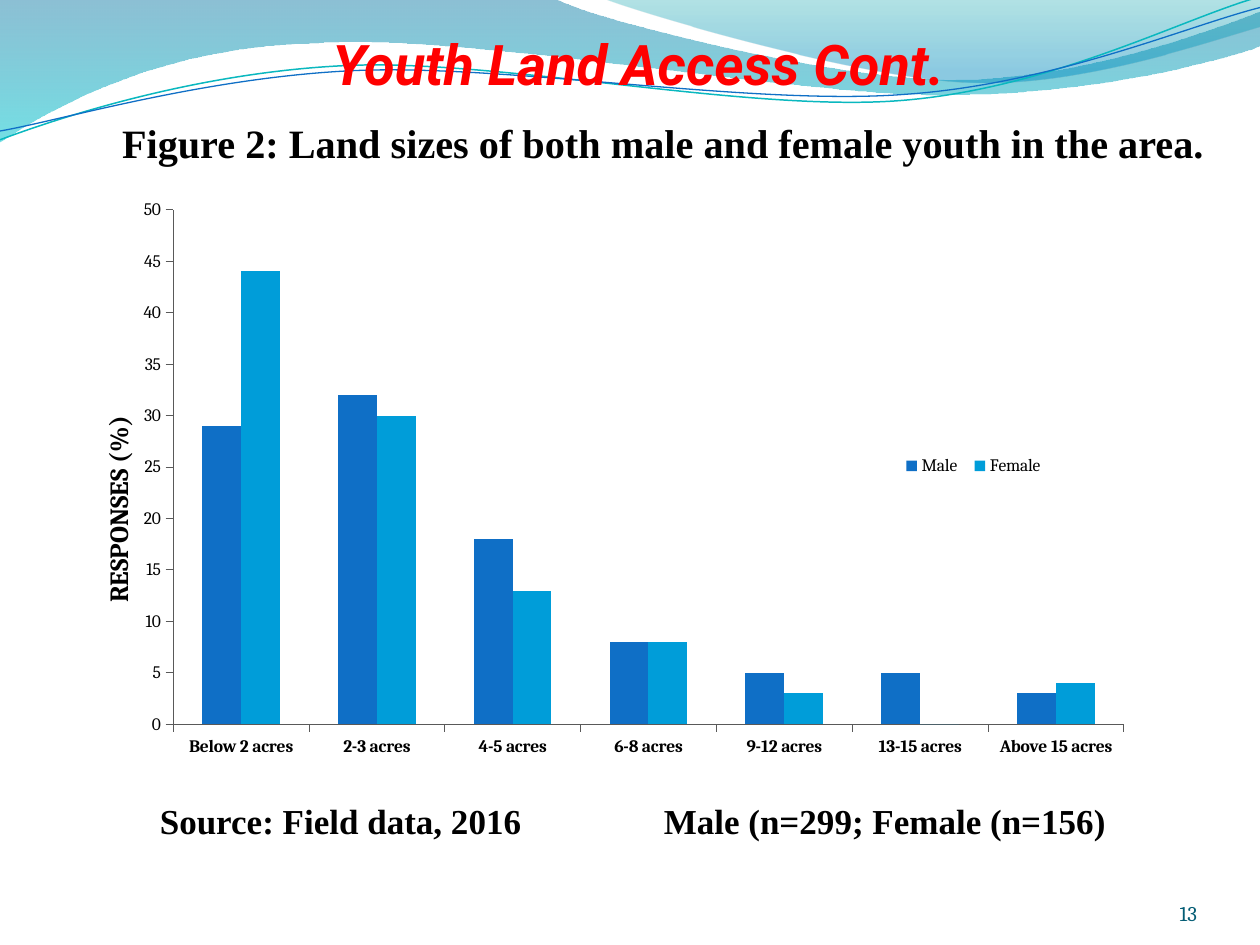
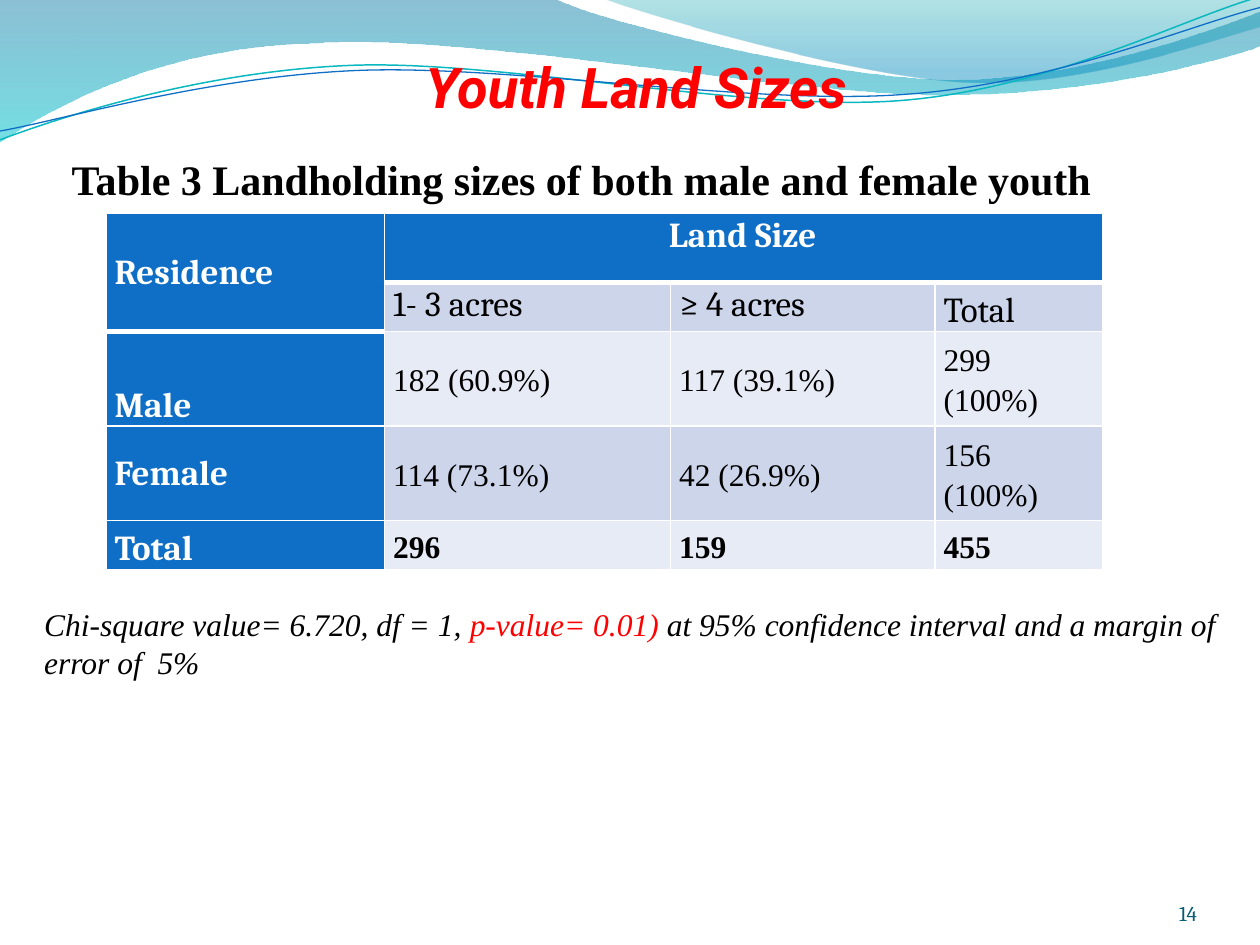
import lxml.etree
import pptx
import pptx.chart.data
import pptx.dml.color
import pptx.enum.chart
import pptx.enum.text
import pptx.oxml
import pptx.oxml.ns
import pptx.util

Inches = pptx.util.Inches
Pt = pptx.util.Pt
Align = pptx.enum.text.PP_ALIGN
Anchor = pptx.enum.text.MSO_ANCHOR
qn = pptx.oxml.ns.qn

COLORS = {
    "title": "FF0000", "text": "000000", "number": "045D75", "white": "FFFFFF",
    "blue": "0F6FC6", "sky": "009DD9", "teal": "0AB8BF", "axis": "595959",
    "row_dark": "CCD5EA", "row_light": "E7EBF5",
    "wave_top": "0074A1", "wave_bottom": "00C6CF",
    "crest_top": "00A1A9", "crest_bottom": "008BBF",
}
SERIF, HEADING, BODY = "Times New Roman", "Roboto", "Cambria"

# An outline is a list of steps: one point for a line, three for a Bezier curve.
WAVE = [[(0, 0)], [(4.4, -0.01)],
        [(4.76, 0.17), (6.64, 0.63), (7.58, 0.63)],
        [(8.53, 0.63), (9.58, 0.26), (10, 0.09)], [(10.01, 0.36)],
        [(9.83, 0.44), (8.7, 0.76), (7.46, 0.75)],
        [(6.22, 0.75), (3.82, 0.28), (2.57, 0.34)],
        [(1.29, 0.36), (0.46, 0.83), (-0.01, 1.13)]]
CREST = [[(4.79, -0.01)],
         [(5.09, 0.11), (6.82, 0.62), (7.69, 0.65)],
         [(8.56, 0.69), (9.61, 0.32), (10, 0.21)], [(10, 0)]]
TEAL_LINE = [[(0, 1.11)],
             [(0.48, 0.93), (1.58, 0.57), (2.77, 0.52)],
             [(3.95, 0.47), (5.93, 0.89), (7.13, 0.8)],
             [(8.33, 0.71), (9.38, 0.15), (9.98, -0.02)]]
BLUE_LINE = [[(0, 1.04)],
             [(0.47, 0.96), (1.64, 0.61), (2.83, 0.56)],
             [(4.03, 0.51), (5.97, 0.84), (7.17, 0.75)],
             [(8.36, 0.67), (9.41, 0.21), (10, 0.06)]]


def rgb(name):
    return pptx.dml.color.RGBColor.from_string(COLORS[name])


def bend_segments(shape, outline):
    """Turn each run of three straight steps that stands for a curve into a Bezier."""
    steps = iter(list(shape._element.iter(qn("a:lnTo"))))
    for segment in outline[1:]:
        first, *others = [next(steps) for _ in segment]
        if others:
            curve = lxml.etree.Element(qn("a:cubicBezTo"))
            first.addprevious(curve)
            for step in (first, *others):
                curve.append(step[0])
                step.getparent().remove(step)


def set_font(font, name, size, color="text", bold=False, italic=False):
    font.name, font.size, font.bold, font.italic = name, Pt(size), bold, italic
    font.color.rgb = rgb(color)


def set_layout(element, index, **fractions):
    """Place a chart part by fractions of the chart's frame."""
    for old in element.findall(qn("c:layout")):
        element.remove(old)
    layout = lxml.etree.Element(qn("c:layout"))
    manual = lxml.etree.SubElement(layout, qn("c:manualLayout"))
    settings = {"xMode": "edge", "yMode": "edge", **fractions}
    if element.tag == qn("c:plotArea"):
        settings = {"layoutTarget": "inner", **settings}
    for key, value in settings.items():
        lxml.etree.SubElement(manual, qn(f"c:{key}")).set("val", str(value))
    element.insert(index, layout)


def set_borders(cell, top, bottom):
    properties = cell._tc.get_or_add_tcPr()
    for side, width in (("L", 1), ("R", 1), ("T", top), ("B", bottom)):
        line = lxml.etree.SubElement(properties, qn(f"a:ln{side}"), w=str(Pt(width)))
        fill = lxml.etree.SubElement(line, qn("a:solidFill"))
        lxml.etree.SubElement(fill, qn("a:srgbClr"), val=COLORS["white"])


class Deck:
    def __init__(self):
        self.presentation = pptx.Presentation()
        self.presentation.slide_width = Inches(10)
        self.presentation.slide_height = Inches(7.5)
        self.slide = None

    def start_slide(self, title, title_box, number):
        self.slide = self.presentation.slides.add_slide(self.presentation.slide_layouts[6])
        self.band(WAVE, ("wave_top", 0, 45), ("wave_bottom", 1, 55))
        self.band(CREST, ("crest_top", 0, 30), ("crest_bottom", 0.8, 45))
        self.curve(TEAL_LINE, "teal", 0.85)
        self.curve(BLUE_LINE, "blue", 0.75)
        self.text(title_box, [(title, "title")], HEADING, 32, bold=True, italic=True,
                  align=Align.CENTER, anchor=Anchor.BOTTOM, insets=(0, 0, 0.02, 0))
        self.text((8.67, 6.95, 0.83, 0.4), [(number, "number")], BODY, 12,
                  align=Align.RIGHT, anchor=Anchor.BOTTOM, insets=(0, 0, 0, 0))

    def outline(self, outline, close):
        start, *points = [(Inches(x), Inches(y)) for segment in outline for x, y in segment]
        builder = self.slide.shapes.build_freeform(*start)
        builder.add_line_segments(points, close=close)
        shape = builder.convert_to_shape()
        bend_segments(shape, outline)
        shape.shadow.inherit = False
        return shape

    def band(self, outline, *stops):
        """Fill an outline with a downward gradient of (colour, position, opacity) stops."""
        shape = self.outline(outline, close=True)
        shape.line.fill.background()
        shape.fill.gradient()
        shape.fill.gradient_angle = 270
        for stop, (color, position, opacity) in zip(shape.fill.gradient_stops, stops):
            stop.color.rgb = rgb(color)
            stop.position = position
            color_element = stop._gs.find(qn("a:srgbClr"))
            lxml.etree.SubElement(color_element, qn("a:alpha"), val=str(opacity * 1000))

    def curve(self, outline, color, width):
        shape = self.outline(outline, close=False)
        shape.fill.background()
        shape.line.color.rgb = rgb(color)
        shape.line.width = Pt(width)

    def text(self, box, parts, font, size, bold=False, italic=False, align=Align.LEFT,
             anchor=Anchor.TOP, insets=(0.1, 0.05, 0.1, 0.05), spacing=1, before=0):
        """Add one paragraph made of (text, colour) parts."""
        frame = self.slide.shapes.add_textbox(*map(Inches, box)).text_frame
        frame.word_wrap = True
        frame.vertical_anchor = anchor
        (frame.margin_left, frame.margin_top,
         frame.margin_right, frame.margin_bottom) = map(Inches, insets)
        paragraph = frame.paragraphs[0]
        paragraph.alignment = align
        paragraph.line_spacing = spacing
        paragraph.space_before = Pt(before)
        for words, color in parts:
            run = paragraph.add_run()
            run.text = words
            set_font(run.font, font, size, color, bold, italic)
        return paragraph

    def column_chart(self, box, categories, series, value_title):
        data = pptx.chart.data.CategoryChartData()
        data.categories = categories
        for name, values, _ in series:
            data.add_series(name, values)
        chart = self.slide.shapes.add_chart(
            pptx.enum.chart.XL_CHART_TYPE.COLUMN_CLUSTERED, *map(Inches, box), data).chart
        set_font(chart.font, BODY, 10)
        chart.has_title = False
        plot = chart.plots[0]
        plot.gap_width, plot.overlap, plot.vary_by_categories = 150, 0, False
        for columns, (_, _, color) in zip(plot.series, series):
            columns.format.fill.solid()
            columns.format.fill.fore_color.rgb = rgb(color)
            columns.invert_if_negative = False

        for axis in (chart.category_axis, chart.value_axis):
            axis.has_major_gridlines = False
            axis.major_tick_mark = pptx.enum.chart.XL_TICK_MARK.OUTSIDE
            axis.format.line.color.rgb = rgb("axis")
            axis.format.line.width = Pt(0.5)
        set_font(chart.category_axis.tick_labels.font, BODY, 10, bold=True)
        value_axis = chart.value_axis
        value_axis.minimum_scale, value_axis.maximum_scale, value_axis.major_unit = 0, 50, 5
        title_frame = value_axis.axis_title.text_frame
        title_frame.text = value_title
        title_frame._txBody.bodyPr.set("rot", "-5400000")
        set_font(title_frame.paragraphs[0].runs[0].font, BODY, 15, bold=True)
        set_layout(value_axis.axis_title._element, 1, x=0.03, y=0.38)

        chart.has_legend = True
        chart.legend.position = pptx.enum.chart.XL_LEGEND_POSITION.RIGHT
        chart.legend.include_in_layout = False
        set_font(chart.legend.font, BODY, 10)
        set_layout(chart.legend._element, 1, x=0.74, y=0.43, w=0.14, h=0.07)
        set_layout(chart._chartSpace.chart.plotArea, 0, x=0.098, y=0.065, w=0.846, h=0.804)

    def table(self, box, widths, heights, rows):
        table = self.slide.shapes.add_table(len(rows), len(widths), *map(Inches, box)).table
        for column, width in zip(table.columns, widths):
            column.width = Inches(width)
        for row, height in zip(table.rows, heights):
            row.height = Inches(height)
        table.cell(0, 0).merge(table.cell(1, 0))
        table.cell(0, 1).merge(table.cell(0, len(widths) - 1))
        for r, row in enumerate(rows):
            for c, words in enumerate(row):
                self.table_cell(table.cell(r, c), r, c, words, last=r == len(rows) - 1)

    def table_cell(self, cell, row, column, words, last):
        is_header = row == 0 or column == 0
        header_rows = 2 if column == 0 else 1
        set_borders(cell, top=3 if row == header_rows else 1,
                    bottom=3 if row == header_rows - 1 else 1)
        cell.fill.solid()
        cell.fill.fore_color.rgb = rgb(
            "blue" if is_header else "row_dark" if row % 2 else "row_light")
        cell.margin_left, cell.margin_right = Inches(0.07), Inches(0.08)
        cell.margin_top = cell.margin_bottom = 0
        if not words:
            return
        cell.vertical_anchor = Anchor.MIDDLE
        if words in ("Male", "Total"):
            cell.vertical_anchor = Anchor.BOTTOM
        elif row < 2 and column > 0:
            cell.vertical_anchor = Anchor.TOP
        cell.text_frame.text = words
        paragraph = cell.text_frame.paragraphs[0]
        font = paragraph.runs[0].font
        paragraph.alignment = Align.LEFT if is_header else Align.JUSTIFY
        paragraph.line_spacing = 1.07
        if is_header:
            set_font(font, BODY, 20, "white", bold=True)
            if column:
                paragraph.alignment = Align.CENTER
        elif row == 1:
            set_font(font, BODY, 20)
        else:
            set_font(font, SERIF, 18, bold=last)
            paragraph.line_spacing = 1.15


def add_land_access_slide(deck):
    deck.start_slide("Youth Land Access Cont.", (0.71, 0.25, 8.74, 0.52), "13")
    deck.text((0.35, 0.83, 9.24, 0.5),
              [("Figure 2: Land sizes of both male and female youth in the area.", "text")],
              SERIF, 23, bold=True, align=Align.RIGHT, insets=(0, 0.05, 0.02, 0.05),
              spacing=1.15, before=4.6)
    deck.column_chart(
        (0.5, 1.335, 8.92, 5.08),
        ["Below 2 acres", "2-3 acres", "4-5 acres", "6-8 acres",
         "9-12 acres", "13-15 acres", "Above 15 acres"],
        [("Male", (29, 32, 18, 8, 5, 5, 3), "blue"),
         ("Female", (44, 30, 13, 8, 3, 0, 4), "sky")],
        "RESPONSES (%)")
    source = deck.text((1.17, 6.3, 8.5, 0.44),
                       [("Source: Field data, 2016\t\tMale (n=299; Female (n=156)", "text")],
                       SERIF, 20, bold=True)
    properties = source._p.get_or_add_pPr()
    tab_stops = lxml.etree.SubElement(properties, qn("a:tabLst"))
    for position in (3, 4):
        lxml.etree.SubElement(tab_stops, qn("a:tab"), pos=str(Inches(position)), algn="l")


def add_land_sizes_slide(deck):
    deck.start_slide("Youth Land Sizes", (0.69, 0.2, 8.74, 0.75), "14")
    deck.text((0.35, 4.75, 9.32, 0.75),
              [("Chi-square value= 6.720, df = 1, ", "text"), ("p-value= 0.01) ", "title"),
               ("at 95% confidence interval and a margin of error of  5%", "text")],
              SERIF, 18, italic=True, align=Align.JUSTIFY, insets=(0, 0.05, 0.02, 0.05))
    deck.text((0.47, 1.17, 9.18, 0.5),
              [("Table 3 Landholding sizes of both male and female youth", "text")],
              SERIF, 24, bold=True, anchor=Anchor.MIDDLE)
    deck.table((0.84, 1.69, 7.91, 2.83), (2.21, 2.27, 2.1, 1.33),
               (0.55, 0.39, 0.75, 0.75, 0.39),
               [("Residence", "Land Size", "", ""),
                ("", "1- 3 acres", "≥ 4 acres", "Total"),
                ("Male", "182 (60.9%)", "117 (39.1%)", "299 (100%)"),
                ("Female", "114 (73.1%)", "42 (26.9%)", "156 (100%)"),
                ("Total", "296", "159", "455")])


def main():
    deck = Deck()
    add_land_access_slide(deck)
    add_land_sizes_slide(deck)
    deck.presentation.save("out.pptx")


if __name__ == "__main__":
    main()
